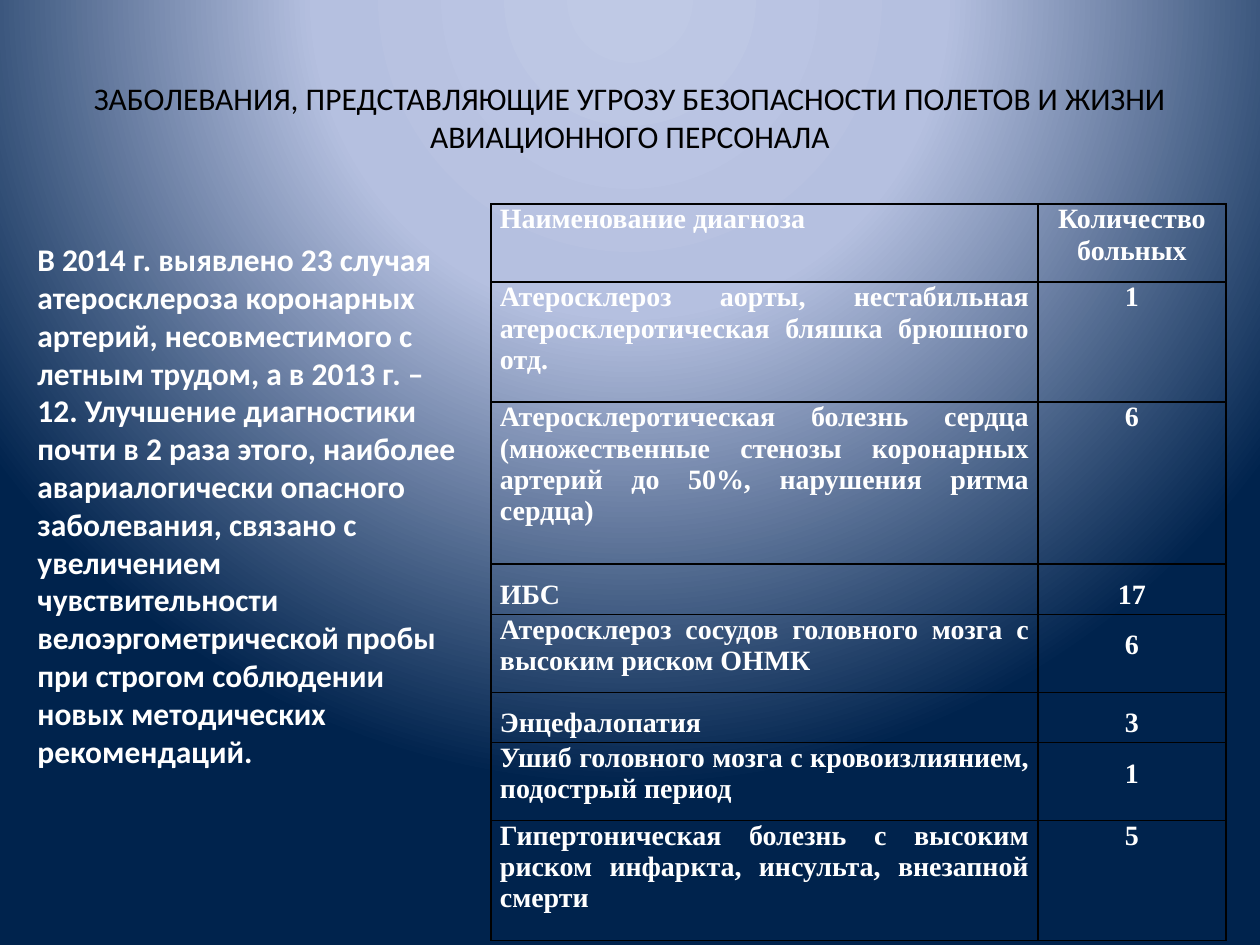
from lxml import etree
from pptx import Presentation
from pptx.dml.color import RGBColor
from pptx.enum.text import MSO_ANCHOR, PP_ALIGN
from pptx.oxml.ns import qn
from pptx.util import Pt

EMU_PER_PX = 914400 // 126
LEFT, CENTER, JUSTIFY = PP_ALIGN.LEFT, PP_ALIGN.CENTER, PP_ALIGN.JUSTIFY
TOP, MIDDLE = MSO_ANCHOR.TOP, MSO_ANCHOR.MIDDLE
BLACK, WHITE = "000000", "FFFFFF"

TITLE = "ЗАБОЛЕВАНИЯ, ПРЕДСТАВЛЯЮЩИЕ УГРОЗУ БЕЗОПАСНОСТИ ПОЛЕТОВ И ЖИЗНИ АВИАЦИОННОГО ПЕРСОНАЛА"
SUMMARY = (
    "В 2014 г. выявлено 23 случая атеросклероза коронарных артерий, "
    "несовместимого с летным трудом, а в 2013 г. – 12. Улучшение диагностики "
    "почти в 2 раза этого, наиболее авариалогически опасного заболевания, "
    "связано с увеличением чувствительности велоэргометрической пробы при "
    "строгом соблюдении новых методических рекомендаций."
)
COLUMN_WIDTHS = (547, 188)
# height, diagnosis, patients, loose diagnosis, loose patients
DIAGNOSES = [
    (78, "Наименование диагноза", "Количество больных", False, False),
    (120, "Атеросклероз аорты, нестабильная атеросклеротическая бляшка брюшного отд.",
     "1", False, False),
    (162, "Атеросклеротическая болезнь сердца (множественные стенозы коронарных "
     "артерий до 50%, нарушения ритма сердца)", "6", False, False),
    (47, "ИБС", "17", True, True),
    (78, "Атеросклероз сосудов головного мозга с высоким риском ОНМК", "6", False, True),
    (47, "Энцефалопатия", "3", True, True),
    (78, "Ушиб головного мозга с кровоизлиянием, подострый период", "1", False, True),
    (120, "Гипертоническая болезнь с высоким риском инфаркта, инсульта, внезапной смерти",
     "5", False, False),
]


def px(length):
    return length * EMU_PER_PX


def rgb(color):
    return RGBColor.from_string(color)


def add_child(parent, tag, **attributes):
    child = etree.SubElement(parent, qn(tag))
    for name, value in attributes.items():
        child.set(name, str(value))
    return child


def set_background(page, stops):
    fill = page.background.fill
    fill.gradient()
    gradient = page.background._cSld.find(".//" + qn("a:gradFill"))
    for child in list(gradient):
        gradient.remove(child)
    stop_list = add_child(gradient, "a:gsLst")
    for percent, color in stops:
        stop = add_child(stop_list, "a:gs", pos=percent * 1000)
        add_child(stop, "a:srgbClr", val=color)
    circle = add_child(gradient, "a:path", path="circle")
    add_child(circle, "a:fillToRect", l=50000, t=-80000, r=50000, b=180000)


def write_text(frame, text, *, font="Calibri", size=18, color=WHITE, bold=True,
               align=LEFT, loose=False):
    frame.word_wrap = True
    para = frame.paragraphs[0]
    para.alignment = align
    if loose:
        para.line_spacing = 1.5
        para.space_before = Pt(12)
    span = para.add_run()
    span.text = text
    span.font.name = font
    span.font.size = Pt(size)
    span.font.bold = bold
    span.font.color.rgb = rgb(color)


def add_text(page, text, left, top, width, height, anchor=TOP, **text_format):
    box = page.shapes.add_textbox(px(left), px(top), px(width), px(height))
    box.text_frame.vertical_anchor = anchor
    write_text(box.text_frame, text, **text_format)


def set_borders(cell):
    properties = cell._tc.get_or_add_tcPr()
    for position, side in enumerate(("a:lnL", "a:lnR", "a:lnT", "a:lnB")):
        line = add_child(properties, side, w=Pt(1))
        fill = add_child(line, "a:solidFill")
        add_child(fill, "a:srgbClr", val=BLACK)
        properties.insert(position, line)


def fill_cell(cell, text, align, loose):
    cell.margin_left = cell.margin_right = px(9)
    cell.margin_top = cell.margin_bottom = 0
    cell.vertical_anchor = TOP
    cell.fill.background()
    set_borders(cell)
    write_text(cell.text_frame, text, font="Times New Roman", size=16,
               align=align, loose=loose)


def add_diagnosis_table(page, left, top):
    height = sum(row[0] for row in DIAGNOSES)
    table = page.shapes.add_table(
        len(DIAGNOSES), len(COLUMN_WIDTHS), px(left), px(top),
        px(sum(COLUMN_WIDTHS)), px(height)).table
    table.first_row = table.horz_banding = False
    for column, width in zip(table.columns, COLUMN_WIDTHS):
        column.width = px(width)
    for row, values in zip(table.rows, DIAGNOSES):
        row_height, diagnosis, patients, loose_diagnosis, loose_patients = values
        row.height = px(row_height)
        fill_cell(row.cells[0], diagnosis, JUSTIFY, loose_diagnosis)
        fill_cell(row.cells[1], patients, CENTER, loose_patients)


def main():
    deck = Presentation()
    deck.slide_width, deck.slide_height = px(1260), px(945)
    page = deck.slides.add_slide(deck.slide_layouts[6])
    set_background(page, [(0, "BFC9E5"), (40, "B5C0E0"), (100, "00234D")])
    add_text(page, TITLE, 63, 38, 1134, 158, anchor=MIDDLE, color=BLACK,
             bold=False, align=CENTER)
    add_diagnosis_table(page, 491, 204)
    add_text(page, SUMMARY, 25, 234, 446, 547)
    deck.save("out.pptx")


if __name__ == "__main__":
    main()
